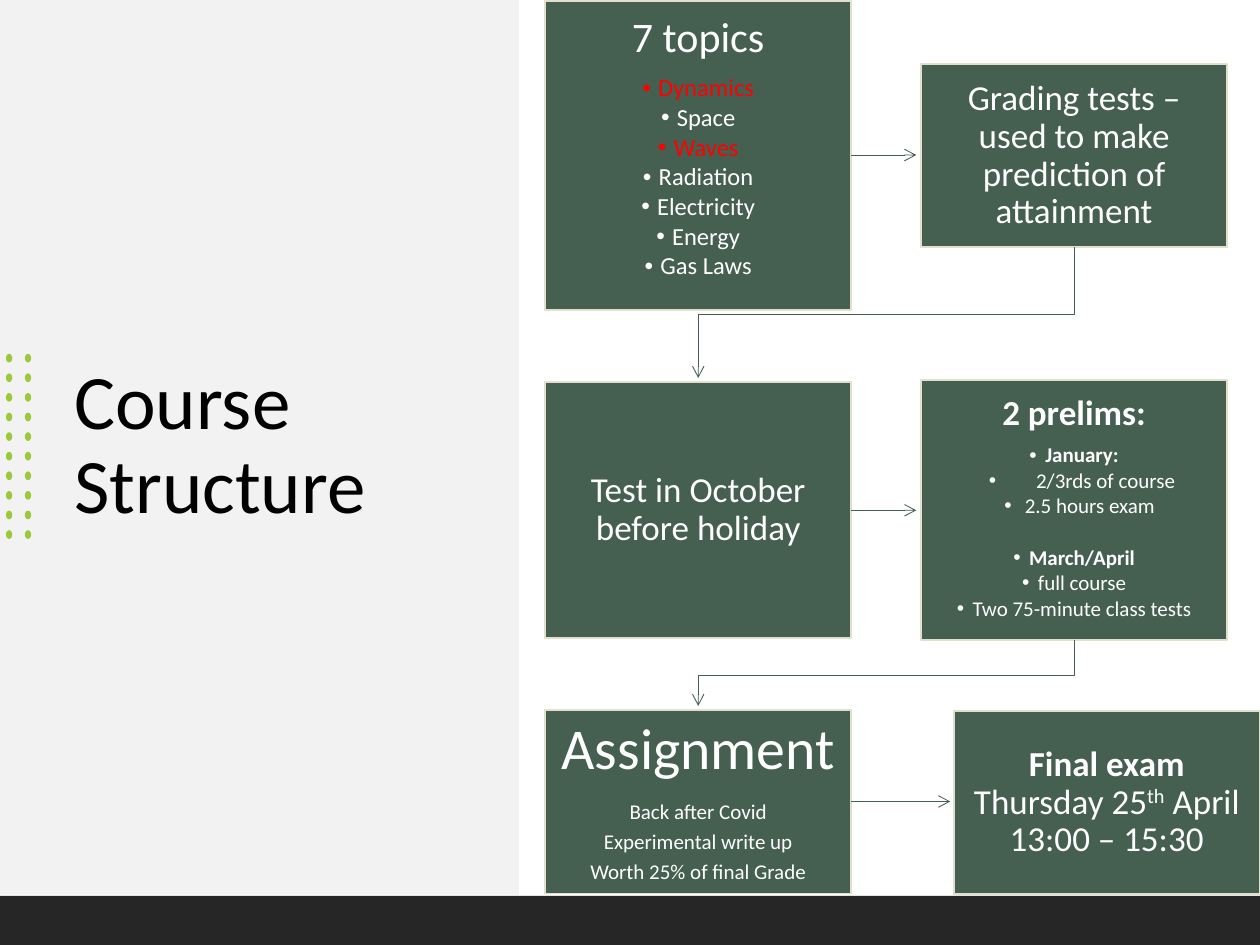
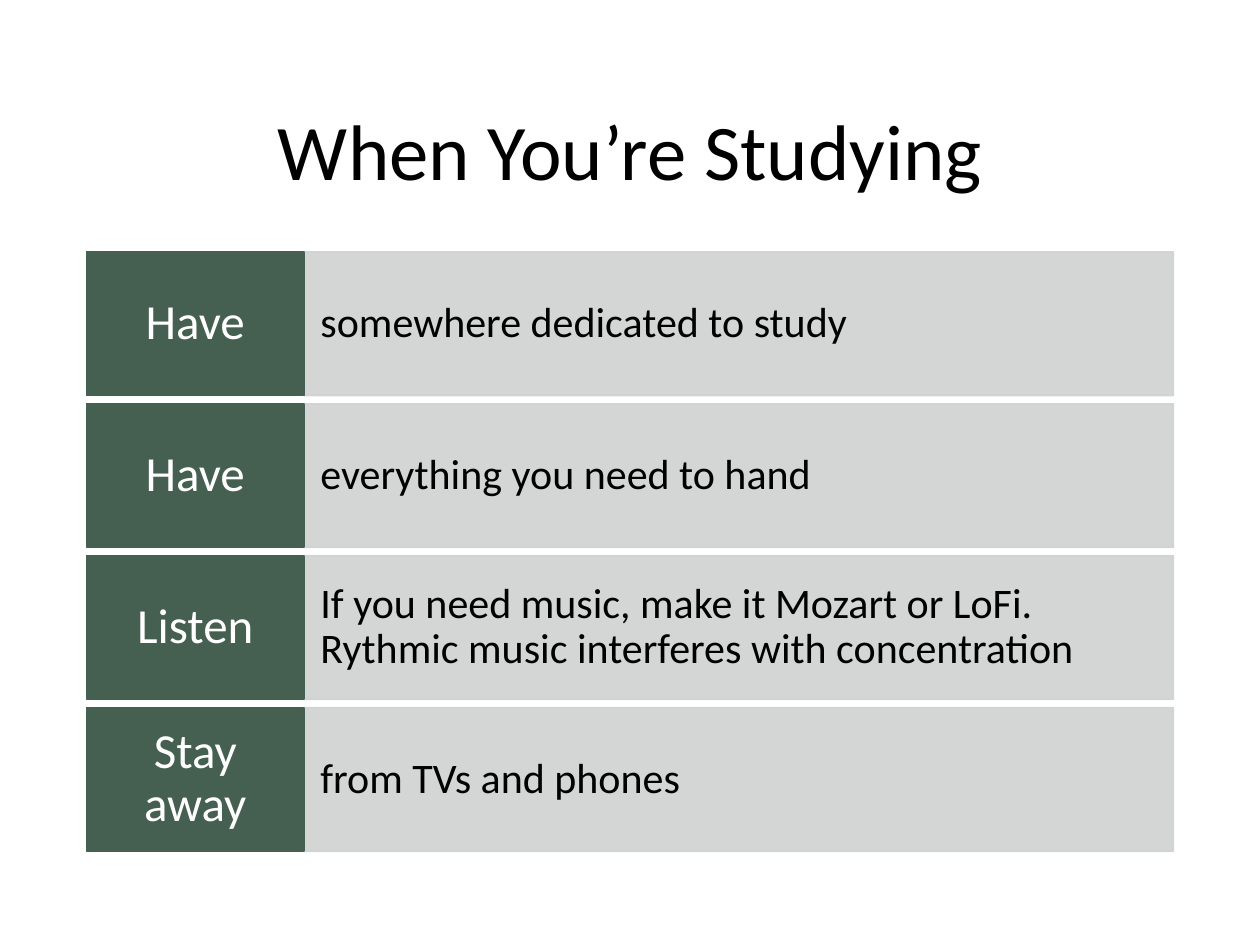
from dataclasses import dataclass

from lxml import etree
from pptx import Presentation
from pptx.dml.color import RGBColor
from pptx.enum import shapes, text
from pptx.oxml.ns import qn
from pptx.util import Pt

FONT = "Calibri"
GREEN, CREAM, LIME, RED = "455F51", "E2DFCC", "99CB38", "FF0000"
WHITE, BLACK, PANEL, BAND, GREY = "FFFFFF", "000000", "F2F2F2", "262626", "CFD2D0"
CENTER, LEFT = text.PP_ALIGN.CENTER, text.PP_ALIGN.LEFT
TOP, MIDDLE = text.MSO_ANCHOR.TOP, text.MSO_ANCHOR.MIDDLE


def rgb(value):
    return RGBColor.from_string(value)


@dataclass
class Line:
    text: str
    size: float
    color: str = WHITE
    bold: bool = False
    indent: float = 0
    gap: float = 0
    align: int = CENTER
    extra: tuple = ()


class Deck:
    """Hold the shared style and the slide being built."""

    def __init__(self):
        self.prs = Presentation()
        self.prs.slide_width, self.prs.slide_height = Pt(720), Pt(540)
        self.s = None

    def slide(self, title, box, size, align):
        self.s = self.prs.slides.add_slide(self.prs.slide_layouts[5])
        sp = self.s.shapes.title
        sp.left, sp.top, sp.width, sp.height = map(Pt, box)
        tf = sp.text_frame
        tf.text = title
        tf.word_wrap, tf.auto_size = True, text.MSO_AUTO_SIZE.NONE
        tf.vertical_anchor = MIDDLE
        p = tf.paragraphs[0]
        p.alignment, p.line_spacing = align, 0.9
        self.font(p.runs[0], size, BLACK)

    def font(self, r, size, color, bold=False):
        r.font.name, r.font.size, r.font.bold = FONT, Pt(size), bold
        r.font.color.rgb = rgb(color)

    def shape(self, box, fill, line=None, alpha=None, kind=shapes.MSO_SHAPE.RECTANGLE):
        sp = self.s.shapes.add_shape(kind, *map(Pt, box))
        sp.shadow.inherit = False
        sp.fill.solid()
        sp.fill.fore_color.rgb = rgb(fill)
        if line:
            sp.line.color.rgb = rgb(line)
            sp.line.width = Pt(1)
        else:
            sp.line.fill.background()
        if alpha:
            for color in sp._element.spPr.iter(qn("a:srgbClr")):
                etree.SubElement(color, qn("a:alpha"), val=str(alpha * 1000))
        return sp

    def card(self, box, lines, fill=GREEN, line=CREAM, anchor=MIDDLE, inset=(8.6, 8.6), alpha=None):
        tf = self.shape(box, fill, line, alpha).text_frame
        tf.word_wrap, tf.vertical_anchor = True, anchor
        tf.margin_left = tf.margin_right = Pt(inset[0])
        tf.margin_top = tf.margin_bottom = Pt(inset[1])
        tf.text = "\n".join(item.text for item in lines)
        for p, item in zip(tf.paragraphs, lines):
            self.paragraph(p, item)

    def paragraph(self, p, item):
        p.alignment, p.line_spacing = item.align, 0.9
        p.space_after = Pt(round(item.size * (0.13 if item.indent else 0.34) + item.gap, 1))
        self.font(p.runs[0], item.size, item.color, item.bold)
        for words, baseline in item.extra:
            r = p.add_run()
            r.text = words
            self.font(r, item.size, item.color)
            if baseline:
                r._r.get_or_add_rPr().set("baseline", str(baseline))
        if item.indent:
            pPr = p._p.get_or_add_pPr()
            pPr.set("marL", str(Pt(item.indent)))
            pPr.set("indent", str(Pt(-9)))
            etree.SubElement(pPr, qn("a:buFont"), typeface="Arial")
            etree.SubElement(pPr, qn("a:buChar"), char="•")

    def arrow(self, start, *rest):
        if len(rest) == 1:
            sp = self.s.shapes.add_connector(
                shapes.MSO_CONNECTOR.STRAIGHT, *map(Pt, start + rest[0]))
            etree.SubElement(sp._element.spPr, qn("a:effectLst"))
        else:
            fb = self.s.shapes.build_freeform(*map(Pt, start))
            fb.add_line_segments([(Pt(x), Pt(y)) for x, y in rest], close=False)
            sp = fb.convert_to_shape()
            sp.fill.background()
            sp.shadow.inherit = False
        sp.line.color.rgb = rgb(GREEN)
        sp.line.width = Pt(0.5)
        etree.SubElement(sp.line._get_or_add_ln(), qn("a:tailEnd"), type="arrow")


def course_structure(deck):
    deck.slide("Course Structure", (35.3, 95, 229, 320.4), 44, LEFT)
    panel = deck.shape((0, 0, 296.6, 511.2), PANEL)
    deck.s.shapes._spTree.insert(2, panel._element)
    for row in range(10):
        for col in range(2):
            deck.shape((3.4 + 10.8 * col, 202.2 + 11.2 * row, 3.6, 5), LIME,
                       kind=shapes.MSO_SHAPE.OVAL)
    deck.shape((0, 511.9, 720, 28.1), BAND)

    left, right, width = 311.5, 526.3, 175
    topics = ["Dynamics", "Space", "Waves", "Radiation", "Electricity", "Energy", "Gas Laws"]
    deck.card((left, 0.6, width, 176.4), [Line("7 topics", 24)] + [
        Line(topic, 14, RED if topic in ("Dynamics", "Waves") else WHITE, indent=9)
        for topic in topics], anchor=TOP)
    deck.card((right, 36.8, width, 104.6),
              [Line("Grading tests – used to make prediction of attainment", 20)])
    deck.card((left, 218.4, width, 146), [Line("Test in October before holiday", 20)])
    deck.card((right, 217.2, width, 148.6), [
        Line("2 prelims:", 20, bold=True),
        Line("January:", 12, bold=True, indent=9),
        Line("\t2/3rds of course", 12, indent=18),
        Line(" 2.5 hours exam ", 12, indent=18, gap=14.8),
        Line("March/April", 12, bold=True, indent=9),
        Line("full course", 12, indent=9),
        Line("Two 75-minute class tests", 12, indent=9)], anchor=TOP)
    notes = ["Back after Covid", "Experimental write up", "Worth 25% of final Grade"]
    deck.card((left, 405.8, width, 104.8),
              [Line("Assignment", 33)] + [Line(note, 12) for note in notes])
    deck.card((545, 406.3, width, 104.8), [
        Line("Final exam ", 20, bold=True,
             extra=(("Thursday 25", 0), ("th", 30000), (" April 13:00 – 15:30", 0)))])

    for y, end in ((88.6, 523.6), (291.6, 523.6), (458, 543)):
        deck.arrow((left + width, y), (end, y))
    x1, x2 = right + width / 2, left + width / 2
    for start, bend, end in ((141.4, 179.8, 216), (365.8, 385.9, 403.4)):
        deck.arrow((x1, start), (x1, bend), (x2, bend), (x2, end))


def studying(deck):
    deck.slide("When You’re Studying", (49.5, 43.9, 621, 89.3), 45, CENTER)
    tips = [
        ("Have", "somewhere dedicated to study"),
        ("Have", "everything you need to hand"),
        ("Listen", "If you need music, make it Mozart or LoFi. "
                   "Rythmic music interferes with concentration"),
        ("Stay away", "from TVs and phones"),
    ]
    for i, (verb, advice) in enumerate(tips):
        y = 144 + 86.8 * i
        deck.card((173.7, y, 496.8, 82), [Line(advice, 24, BLACK, align=LEFT)],
                  GREY, GREY, inset=(9.4, 20.9), alpha=90)
        deck.card((49.5, y, 124.2, 82), [Line(verb, 28)], line=GREEN, inset=(6.5, 7.9))


def main():
    deck = Deck()
    course_structure(deck)
    studying(deck)
    deck.prs.save("out.pptx")


if __name__ == "__main__":
    main()
